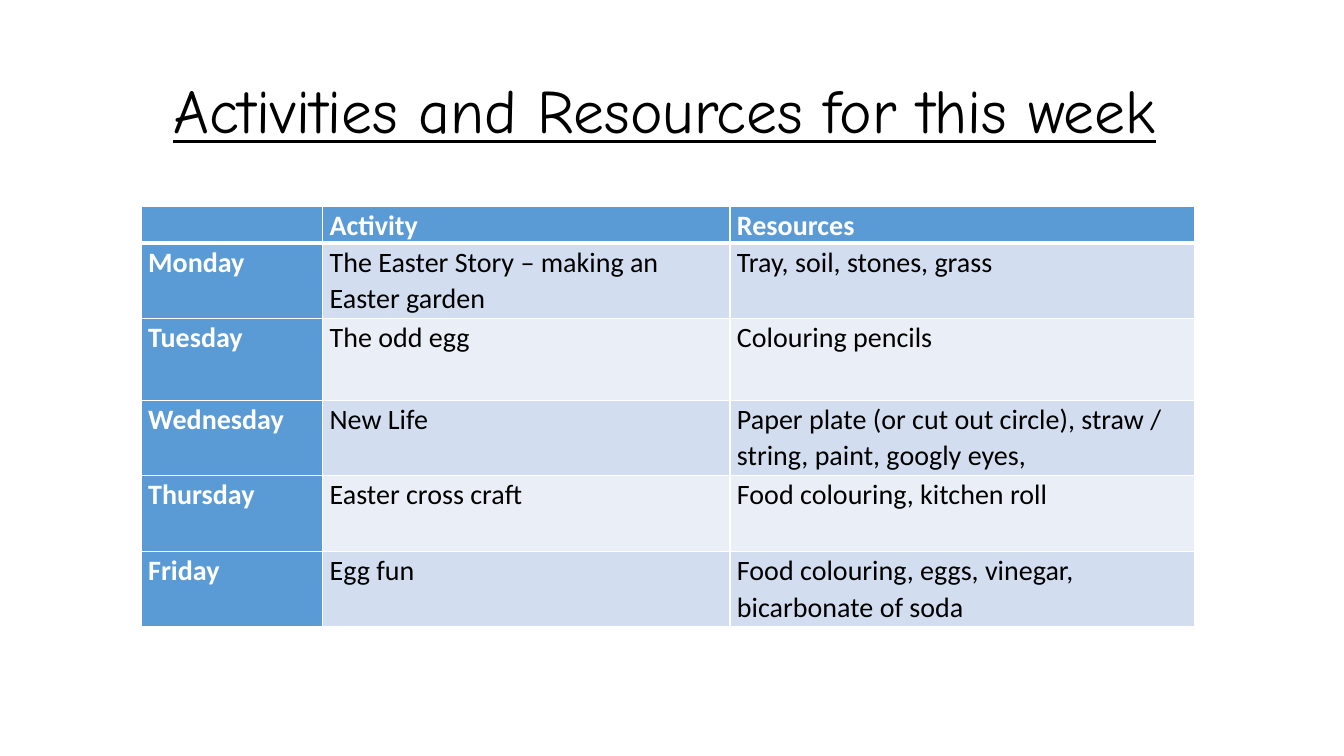
"""Build a slide with the week's activities and resources."""
from lxml import etree
from pptx import Presentation, util as u
from pptx.dml import color
from pptx.enum import text
from pptx.oxml import ns

PX = 9144


def px(*lengths):
    return [u.Emu(length * PX) for length in lengths]


def rgb(value):
    return color.RGBColor.from_string(value)


WHITE, BLACK, BLUE = "FFFFFF", "000000", "5B9BD5"
BANDS = ["EAEFF7", "D2DEEF"]
COLUMN_WIDTHS = px(180, 404, 461)
ROW_HEIGHTS = px(36, 75, 81, 75, 75, 75)
WEEK = [
    ("", "Activity", "Resources"),
    ("Monday", "The Easter Story – making an Easter garden", "Tray, soil, stones, grass"),
    ("Tuesday", "The odd egg", "Colouring pencils"),
    ("Wednesday", "New Life",
     "Paper plate (or cut out circle), straw / string, paint, googly eyes,"),
    ("Thursday", "Easter cross craft", "Food colouring, kitchen roll"),
    ("Friday", "Egg fun", "Food colouring, eggs, vinegar, bicarbonate of soda"),
]

deck = Presentation()
deck.slide_width, deck.slide_height = px(1333, 750)
slide = deck.slides.add_slide(deck.slide_layouts[6])

title = slide.shapes.add_textbox(*px(38, 40, 1243, 145)).text_frame
title.word_wrap = True
title.vertical_anchor = text.MSO_ANCHOR.MIDDLE
heading = title.paragraphs[0]
heading.alignment = text.PP_ALIGN.CENTER
heading.line_spacing = 0.9
heading_run = heading.add_run()
heading_run.text = "Activities and Resources for this week"
heading_run.font.color.rgb = rgb(BLACK)
for key, value in {"name": "Comic Neue", "size": u.Pt(44), "underline": True}.items():
    setattr(heading_run.font, key, value)

timetable = slide.shapes.add_table(len(WEEK), 3, *px(140, 205, 1045, 417)).table
for column, width in zip(timetable.columns, COLUMN_WIDTHS):
    column.width = width
for row, height in zip(timetable.rows, ROW_HEIGHTS):
    row.height = height

side_margin, no_margin = px(7, 0)
margins = {"margin_left": side_margin, "margin_right": side_margin,
           "margin_top": no_margin, "margin_bottom": no_margin}
for r, entries in enumerate(WEEK):
    for c, entry in enumerate(entries):
        cell = timetable.cell(r, c)
        is_header = r == 0 or c == 0
        for key, value in margins.items():
            setattr(cell, key, value)
        cell.fill.solid()
        cell.fill.fore_color.rgb = rgb(BLUE if is_header else BANDS[r % 2])
        paragraph = cell.text_frame.paragraphs[0]
        paragraph.line_spacing = 1.07
        if entry:
            run = paragraph.add_run()
            run.text = entry
            run.font.color.rgb = rgb(WHITE if is_header else BLACK)
            for key, value in {"name": "Calibri", "size": u.Pt(20), "bold": is_header}.items():
                setattr(run.font, key, value)
        borders = {"lnL": 1, "lnR": 1, "lnT": 3 if r == 1 else 1, "lnB": 3 if r == 0 else 1}
        properties = cell._tc.get_or_add_tcPr()
        for position, (side, points) in enumerate(borders.items()):
            border = etree.Element(ns.qn(f"a:{side}"), w=str(u.Pt(points)))
            fill = etree.SubElement(border, ns.qn("a:solidFill"))
            etree.SubElement(fill, ns.qn("a:srgbClr"), val=WHITE)
            properties.insert(position, border)

deck.save("out.pptx")
